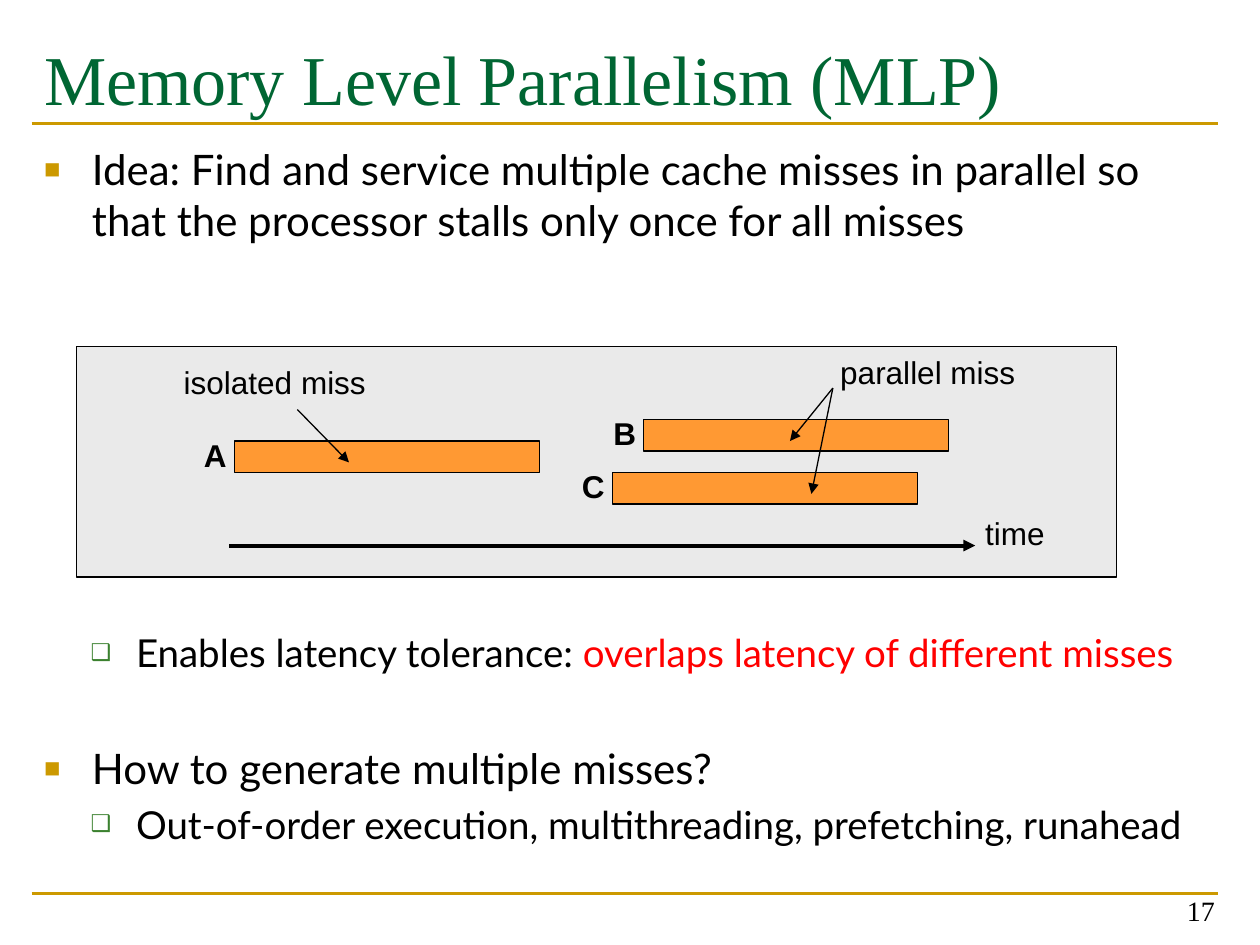
from lxml.etree import SubElement
from pptx import Presentation
from pptx.dml.color import RGBColor
from pptx.enum.shapes import MSO_CONNECTOR as Connector, MSO_SHAPE as Shape
from pptx.enum.text import MSO_ANCHOR as Anchor, MSO_AUTO_SIZE as AutoSize, PP_ALIGN as Align
from pptx.oxml.ns import qn
from pptx.util import Inches, Pt

BLACK = RGBColor(0x00, 0x00, 0x00)
RED = RGBColor(0xFF, 0x00, 0x00)
GREEN = RGBColor(0x00, 0x66, 0x33)
LEAF = RGBColor(0x3B, 0x81, 0x2F)
GOLD = RGBColor(0xCC, 0x99, 0x00)
ORANGE = RGBColor(0xFF, 0x99, 0x33)
GRAY = RGBColor(0xEA, 0xEA, 0xEA)

LEVELS = [
    {"size": 24, "margin": 0.38, "hang": 0.38, "mark": "■", "color": GOLD, "scale": 65},
    {"size": 22, "margin": 0.73, "hang": 0.36, "mark": "❑", "color": LEAF, "scale": 60},
]


def add_text(para, text, size=18, font="Arial", color=BLACK, bold=False):
    """Append a formatted run to a paragraph."""
    span = para.add_run()
    span.text = text
    span.font.size = Pt(size)
    span.font.name = font
    span.font.color.rgb = color
    span.font.bold = bold


def add_label(page, text, left, top, width, height, align=Align.LEFT, anchor=Anchor.TOP, **style):
    """Place a text box holding one line."""
    box = page.shapes.add_textbox(Inches(left), Inches(top), Inches(width), Inches(height))
    frame = box.text_frame
    frame.word_wrap = True
    frame.vertical_anchor = anchor
    frame.paragraphs[0].alignment = align
    add_text(frame.paragraphs[0], text, **style)


def add_line(page, start, end, color=BLACK, width=0.75, arrow=False):
    """Draw a straight line, with an arrowhead at its end if asked."""
    line = page.shapes.add_connector(Connector.STRAIGHT, *map(Inches, (*start, *end)))
    line.line.color.rgb = color
    line.line.width = Pt(width)
    if arrow:
        SubElement(line.line._get_or_add_ln(), qn("a:tailEnd"), type="triangle")
    SubElement(line._element.spPr, qn("a:effectLst"))


def add_box(page, left, top, width, height, fill):
    """Draw a filled rectangle with a thin black outline."""
    box = page.shapes.add_shape(Shape.RECTANGLE, *map(Inches, (left, top, width, height)))
    box.shadow.inherit = False
    box.fill.solid()
    box.fill.fore_color.rgb = fill
    box.line.color.rgb = BLACK
    box.line.width = Pt(0.75)


def move(holder, left, top, width, height):
    """Move a placeholder and return its top-anchored text frame."""
    holder.left, holder.top = Inches(left), Inches(top)
    holder.width, holder.height = Inches(width), Inches(height)
    frame = holder.text_frame
    frame.word_wrap = True
    frame.auto_size = AutoSize.NONE
    frame.vertical_anchor = Anchor.TOP
    return frame


def fill_title(page, left, top, width, height):
    """Write the slide title."""
    frame = move(page.shapes.title, left, top, width, height)
    frame.margin_top = Inches(0.11)
    para = frame.paragraphs[0]
    para.alignment = Align.LEFT
    add_text(para, "Memory Level Parallelism (MLP)", size=40, font="Times New Roman", color=GREEN)


def set_bullet(para, level):
    """Give a paragraph the indent and bullet of its level."""
    look = LEVELS[level]
    para.level = level
    props = para._p.get_or_add_pPr()
    props.set("marL", str(Inches(look["margin"])))
    props.set("indent", str(-Inches(look["hang"])))
    color = SubElement(props, qn("a:buClr"))
    SubElement(color, qn("a:srgbClr"), val=str(look["color"]))
    SubElement(props, qn("a:buSzPct"), val=str(look["scale"] * 1000))
    SubElement(props, qn("a:buFont"), typeface="Arial")
    SubElement(props, qn("a:buChar"), char=look["mark"])


def fill_body(page, left, top, width, height):
    """Write the bullet list, leaving a gap for the diagram."""
    items = [
        (0, 0, [("Idea: Find and service multiple cache misses in parallel so "
                 "that the processor stalls only once for all misses", BLACK)]),
        (1, 220, [("Enables latency tolerance: ", BLACK),
                  ("overlaps latency of different misses", RED)]),
        (0, 38.4, [("How to generate multiple misses?", BLACK)]),
        (1, 4.4, [("Out-of-order execution, multithreading, prefetching, runahead", BLACK)]),
    ]
    frame = move(page.placeholders[1], left, top, width, height)
    for index, (level, gap, spans) in enumerate(items):
        para = frame.add_paragraph() if index else frame.paragraphs[0]
        para.space_before = Pt(gap)
        set_bullet(para, level)
        for text, color in spans:
            add_text(para, text, size=LEVELS[level]["size"], font="Lato", color=color)


def add_timeline(page, left, top, width, height):
    """Draw the panel of isolated and parallel misses over time."""
    add_box(page, left, top, width, height, GRAY)
    for name, across, down in [("A", 1.25, 0.75), ("B", 4.5, 0.58), ("C", 4.25, 1)]:
        add_box(page, left + across, top + down, 2.42, 0.25, ORANGE)
        add_label(page, name, left + across - 0.34, top + down - 0.09, 0.67, 0.4, bold=True)
    for text, across, down, wide in [
        ("isolated miss", 0.75, 0.08, 2.25),
        ("parallel miss", 5.96, 0, 2.08),
        ("time", 7.11, 1.28, 0.92),
    ]:
        add_label(page, text, left + across, top + down, wide, 0.5)
    for x1, y1, x2, y2, weight in [
        (1.21, 1.58, 7.13, 1.58, 2.25),
        (1.75, 0.5, 2.16, 0.92, 0.75),
        (6, 0.33, 5.66, 0.75, 0.75),
        (6, 0.33, 5.83, 1.17, 0.75),
    ]:
        add_line(page, (left + x1, top + y1), (left + x2, top + y2), width=weight, arrow=True)


def add_rules(page, left, width, *tops):
    """Draw the gold rules that frame the content."""
    for top in tops:
        add_line(page, (left, top), (left + width, top), color=GOLD, width=1.5)


def main():
    """Build and save the slide."""
    deck = Presentation()
    deck.slide_width, deck.slide_height = Inches(10), Inches(7.5)
    page = deck.slides.add_slide(deck.slide_layouts[1])
    add_rules(page, 0.25, 9.42, 0.98, 7.09)
    fill_title(page, 0.25, 0.17, 9.42, 1.17)
    fill_body(page, 0.25, 1.09, 9.42, 5.68)
    add_label(page, "17", 7.41, 6.91, 2.33, 0.5, align=Align.RIGHT, anchor=Anchor.BOTTOM,
              size=16, font="Times New Roman")
    add_timeline(page, 0.61, 2.75, 8.25, 1.83)
    deck.save("out.pptx")


if __name__ == "__main__":
    main()
